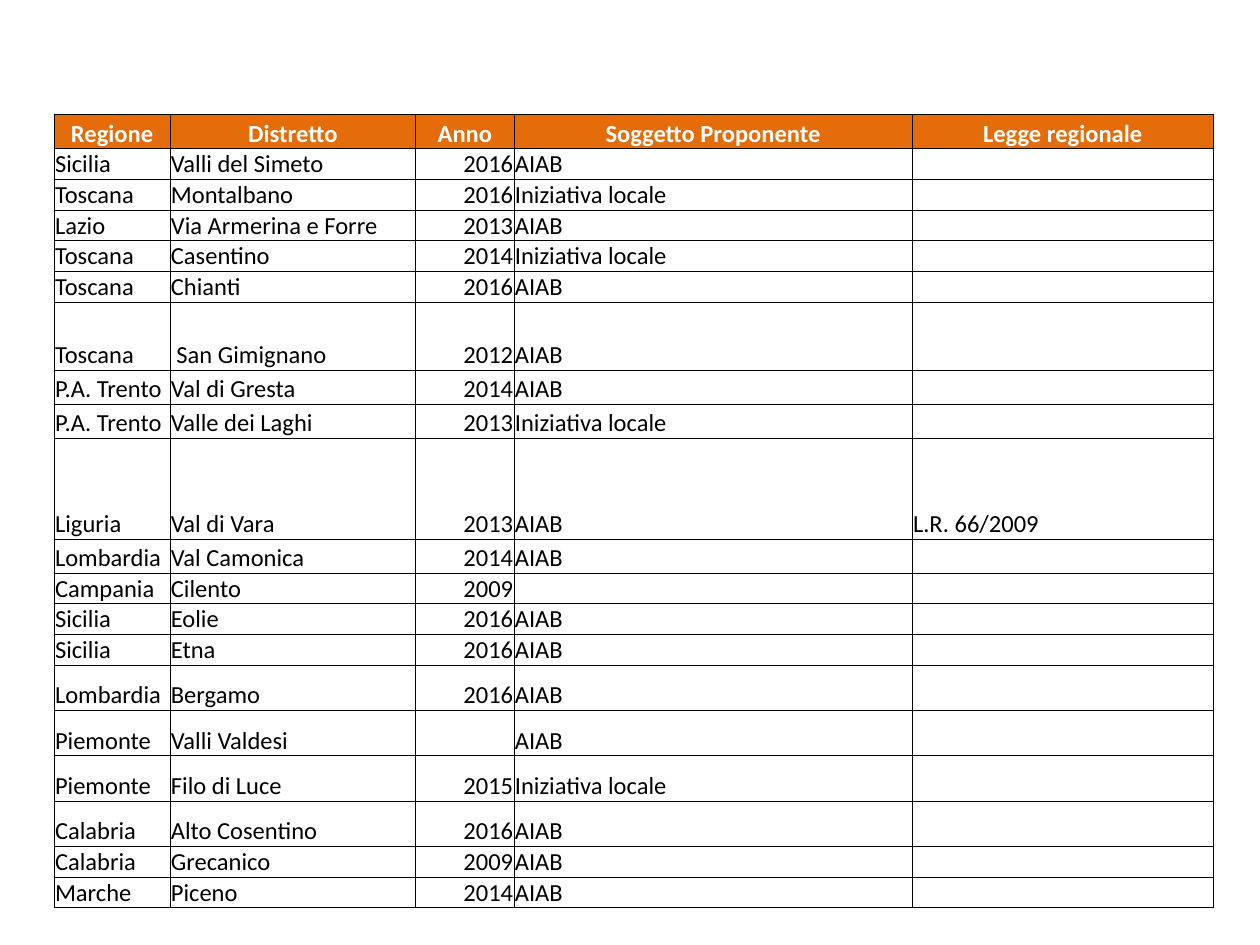
import dataclasses

import lxml.etree
import pptx
import pptx.dml.color
import pptx.enum.text
import pptx.oxml.ns
import pptx.util

Inches = pptx.util.Inches
Pt = pptx.util.Pt
RGB = pptx.dml.color.RGBColor
ALIGN = pptx.enum.text.PP_ALIGN
qn = pptx.oxml.ns.qn


@dataclasses.dataclass(frozen=True)
class Theme:
    font: str = "Calibri"
    size: float = 14
    text: str = "000000"
    header_text: str = "FFFFFF"
    header_fill: str = "E46C0A"
    border: str = "000000"
    border_width: float = 0.5
    cell_margin: float = 0.5


THEME = Theme()

HEADER = ("Regione", "Distretto", "Anno", "Soggetto Proponente", "Legge regionale")
COLUMN_WIDTHS = (0.92, 1.95, 0.78, 3.16, 2.39)
COLUMN_ALIGN = (ALIGN.LEFT, ALIGN.LEFT, ALIGN.RIGHT, ALIGN.LEFT, ALIGN.LEFT)

LOW, MEDIUM, HIGH = 0.24, 0.27, 0.36
DISTRICTS = (
    (LOW, "Sicilia", "Valli del Simeto", "2016", "AIAB", ""),
    (LOW, "Toscana", "Montalbano", "2016", "Iniziativa locale", ""),
    (LOW, "Lazio", "Via Armerina e Forre", "2013", "AIAB", ""),
    (LOW, "Toscana", "Casentino", "2014", "Iniziativa locale", ""),
    (LOW, "Toscana", "Chianti", "2016", "AIAB", ""),
    (2 * MEDIUM, "Toscana", " San Gimignano", "2012", "AIAB", ""),
    (MEDIUM, "P.A. Trento", "Val di Gresta", "2014", "AIAB", ""),
    (MEDIUM, "P.A. Trento", "Valle dei Laghi", "2013", "Iniziativa locale", ""),
    (0.8, "Liguria", "Val di Vara", "2013", "AIAB", "L.R. 66/2009"),
    (MEDIUM, "Lombardia", "Val Camonica", "2014", "AIAB", ""),
    (LOW, "Campania", "Cilento", "2009", "", ""),
    (LOW, "Sicilia", "Eolie", "2016", "AIAB", ""),
    (LOW, "Sicilia", "Etna", "2016", "AIAB", ""),
    (HIGH, "Lombardia", "Bergamo", "2016", "AIAB", ""),
    (HIGH, "Piemonte", "Valli Valdesi", "", "AIAB", ""),
    (HIGH, "Piemonte", "Filo di Luce", "2015", "Iniziativa locale", ""),
    (HIGH, "Calabria", "Alto Cosentino", "2016", "AIAB", ""),
    (LOW, "Calabria", "Grecanico", "2009", "AIAB", ""),
    (LOW, "Marche", "Piceno", "2014", "AIAB", ""),
)


def add_borders(cell):
    tc_pr = cell._tc.get_or_add_tcPr()
    width = str(Pt(THEME.border_width))
    for side in ("a:lnL", "a:lnR", "a:lnT", "a:lnB"):
        ln = lxml.etree.SubElement(tc_pr, qn(side), w=width)
        fill = lxml.etree.SubElement(ln, qn("a:solidFill"))
        lxml.etree.SubElement(fill, qn("a:srgbClr"), val=THEME.border)


def fill_cell(cell, text, align, header):
    add_borders(cell)
    cell.margin_left = cell.margin_right = cell.margin_top = Pt(THEME.cell_margin)
    cell.margin_bottom = Inches(0)
    cell.vertical_anchor = pptx.enum.text.MSO_ANCHOR.BOTTOM
    if header:
        cell.fill.solid()
        cell.fill.fore_color.rgb = RGB.from_string(THEME.header_fill)
    else:
        cell.fill.background()
    p = cell.text_frame.paragraphs[0]
    p.alignment = align
    p.font.name = THEME.font
    p.font.size = Pt(THEME.size)
    p.font.bold = header
    p.font.color.rgb = RGB.from_string(THEME.header_text if header else THEME.text)
    if text:
        p.add_run().text = text
    else:
        lxml.etree.SubElement(p._p, qn("a:endParaRPr"), sz=str(int(THEME.size * 100)))


def add_district_table(s, left, top, width, height):
    rows = ((MEDIUM, *HEADER), *DISTRICTS)
    table = s.shapes.add_table(len(rows), len(HEADER), left, top, width, height).table
    table.horz_banding = False
    for column, column_width in zip(table.columns, COLUMN_WIDTHS):
        column.width = Inches(column_width)
    for i, (row_height, *texts) in enumerate(rows):
        header = i == 0
        table.rows[i].height = Inches(row_height)
        for j, text in enumerate(texts):
            align = ALIGN.CENTER if header else COLUMN_ALIGN[j]
            fill_cell(table.cell(i, j), text, align, header)


def main():
    prs = pptx.Presentation()
    prs.slide_width, prs.slide_height = Inches(10), Inches(7.5)
    s = prs.slides.add_slide(prs.slide_layouts[6])
    add_district_table(s, Inches(0.43), Inches(0.91), Inches(9.2), Inches(6.26))
    prs.save("out.pptx")


if __name__ == "__main__":
    main()
